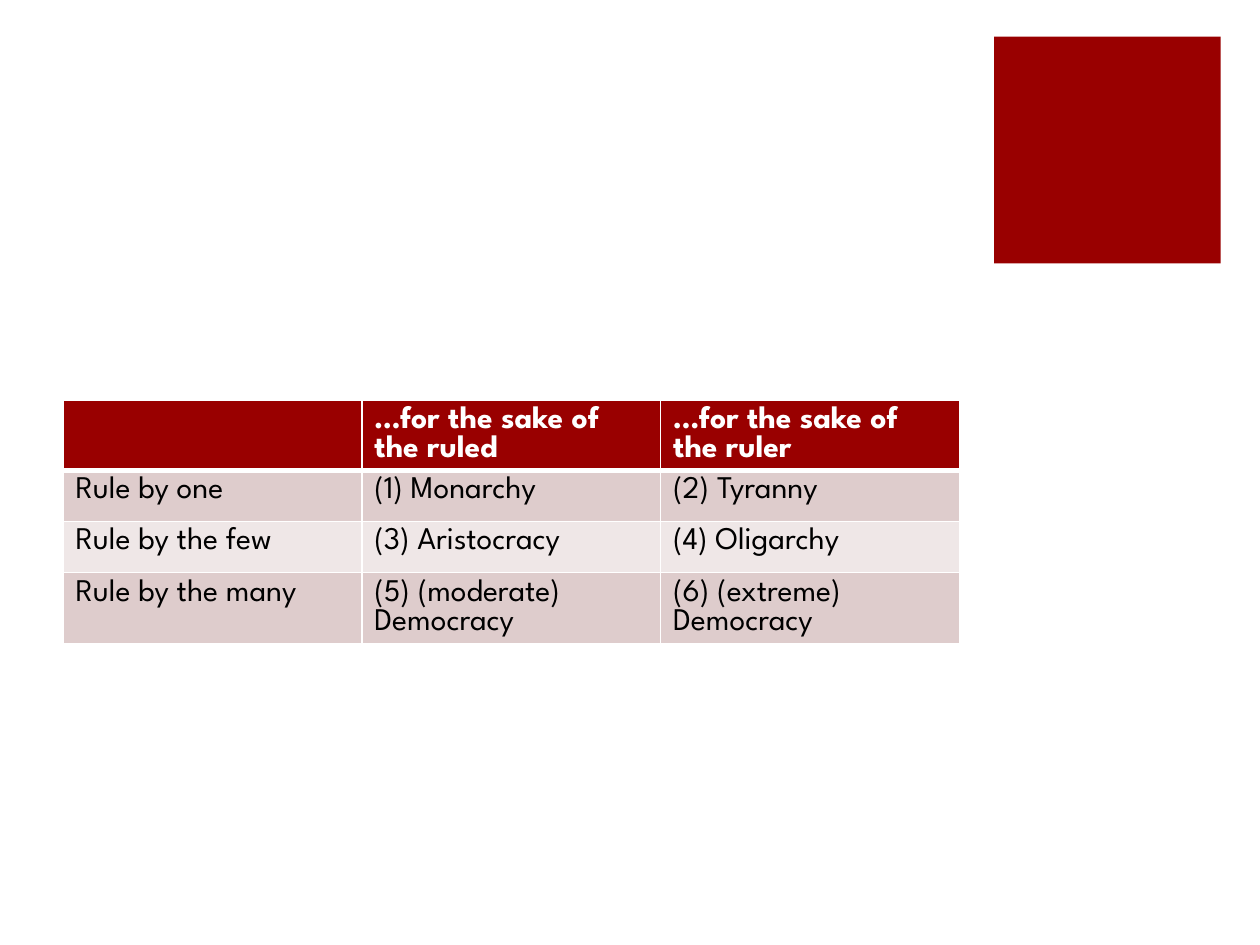
from lxml import etree
from pptx import Presentation
from pptx.dml.color import RGBColor
from pptx.enum.shapes import MSO_SHAPE
from pptx.oxml.ns import qn
from pptx.util import Cm, Pt

RECTANGLE = MSO_SHAPE.RECTANGLE

RED = RGBColor(0x99, 0x00, 0x00)
ROSE = RGBColor(0xDE, 0xCC, 0xCC)
PALE_ROSE = RGBColor(0xEF, 0xE7, 0xE7)
WHITE = RGBColor(0xFF, 0xFF, 0xFF)
BLACK = RGBColor(0x00, 0x00, 0x00)

FONT = "League Spartan"

REGIMES = [
    ["", "…for the sake of the ruled", "…for the sake of the ruler"],
    ["Rule by one", "(1) Monarchy", "(2) Tyranny"],
    ["Rule by the few", "(3) Aristocracy", "(4) Oligarchy"],
    ["Rule by the many", "(5) (moderate) Democracy", "(6) (extreme) Democracy"],
]


def write_text(tf, text, size=18, color=BLACK, bold=False):
    r = tf.paragraphs[0].add_run()
    r.text = text
    r.font.name = FONT
    r.font.size = Pt(size)
    r.font.bold = bold
    r.font.color.rgb = color


def set_borders(cell, color=WHITE, top=1, bottom=1):
    """Draw all four cell edges; widths are in points."""
    tc_pr = cell._tc.get_or_add_tcPr()
    widths = {"a:lnL": 1, "a:lnR": 1, "a:lnT": top, "a:lnB": bottom}
    for i, (tag, width) in enumerate(widths.items()):
        ln = etree.Element(qn(tag), w=str(Pt(width)))
        fill = etree.SubElement(ln, qn("a:solidFill"))
        etree.SubElement(fill, qn("a:srgbClr"), val=str(color))
        tc_pr.insert(i, ln)


def add_corner_square(slide, left, top, size):
    sp = slide.shapes.add_shape(RECTANGLE, left, top, size, size)
    sp.shadow.inherit = False
    sp.fill.solid()
    sp.fill.fore_color.rgb = RED
    sp.line.fill.background()


def add_regime_table(slide, left, top, width, height):
    table = slide.shapes.add_table(
        len(REGIMES), len(REGIMES[0]), left, top, width, height
    ).table
    for i, row in enumerate(REGIMES):
        header = i == 0
        for j, text in enumerate(row):
            cell = table.cell(i, j)
            cell.fill.solid()
            cell.fill.fore_color.rgb = RED if header else ROSE if i % 2 else PALE_ROSE
            set_borders(cell, top=3 if i == 1 else 1, bottom=3 if header else 1)
            if text:
                write_text(cell.text_frame, text, bold=header,
                           color=WHITE if header else BLACK)


def main():
    prs = Presentation()
    prs.slide_width, prs.slide_height = Cm(25.4), Cm(19.05)
    blank = prs.slide_layouts[6]
    s = prs.slides.add_slide(blank)
    add_corner_square(s, Cm(20.04), Cm(0.74), Cm(4.57))
    add_regime_table(s, Cm(1.27), Cm(8.06), Cm(18.07), Cm(4.12))
    prs.save("out.pptx")


if __name__ == "__main__":
    main()
